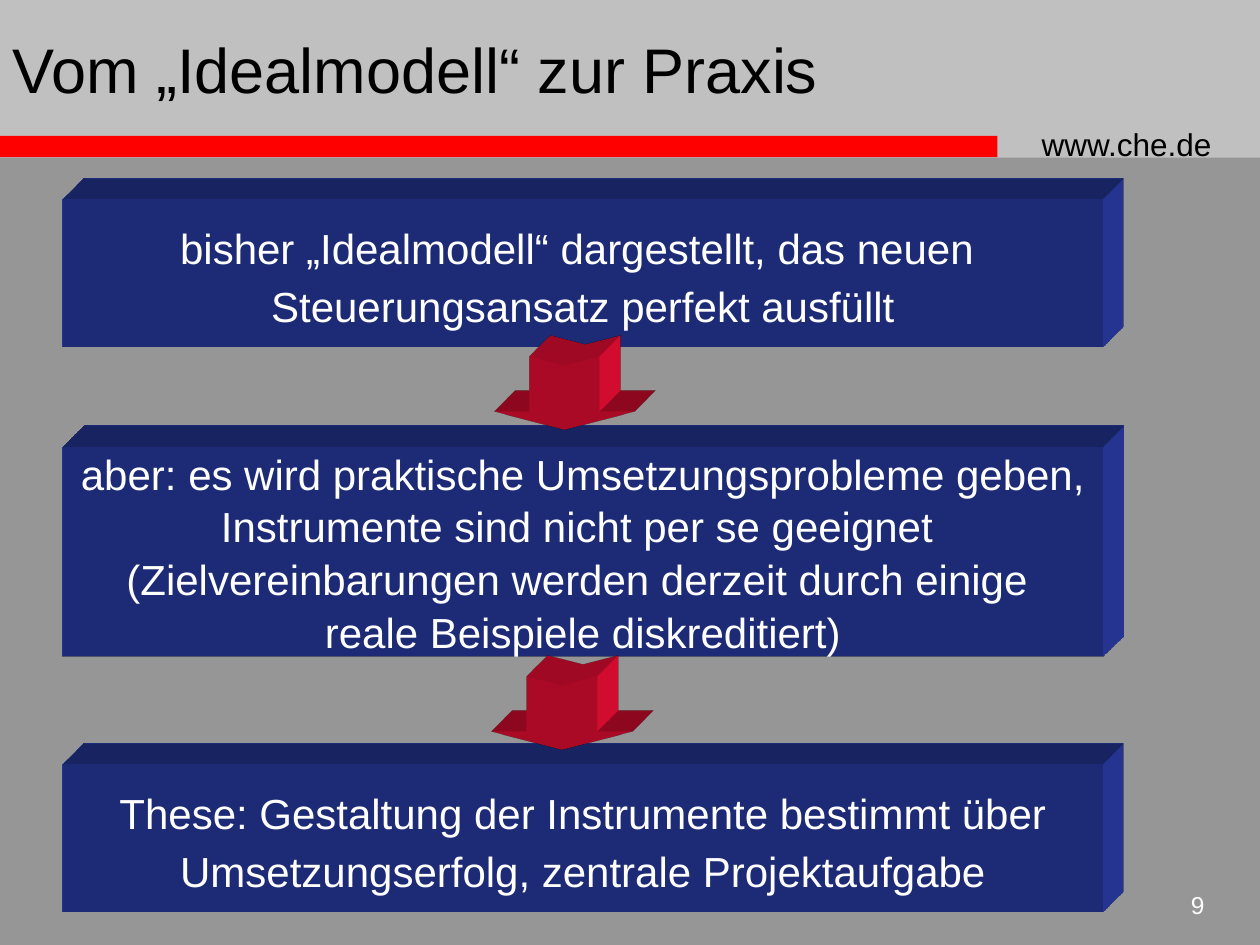
"""Build the slide 'Vom „Idealmodell“ zur Praxis' with three raised boxes and two arrows."""
from lxml.etree import SubElement
from pptx import Presentation
from pptx.dml.color import RGBColor
from pptx.enum.shapes import MSO_SHAPE as Shape
from pptx.enum.text import MSO_ANCHOR as Anchor, PP_ALIGN as Align
from pptx.oxml import parse_xml
from pptx.oxml.ns import nsdecls, qn
from pptx.util import Cm, Pt

FONT = "Arial"
BLACK = RGBColor(0x00, 0x00, 0x00)
WHITE = RGBColor(0xFF, 0xFF, 0xFF)
GRAY = RGBColor(0x96, 0x96, 0x96)
SILVER = RGBColor(0xC0, 0xC0, 0xC0)
RED = RGBColor(0xFF, 0x00, 0x00)
BLUE = RGBColor(0x29, 0x3B, 0xA5)
CRIMSON = RGBColor(0xF0, 0x0E, 0x34)

TITLE = "Vom „Idealmodell“ zur Praxis"
BANDS = [
    (SILVER, (0, 0, 25.4, 3.18)),
    (RED, (-0.03, 2.74, 20.14, 0.43)),
]
LABELS = [
    ("www.che.de", 18, BLACK, Align.LEFT, (20.75, 2.39, 4.45, 1.02)),
    ("9", 14, WHITE, Align.RIGHT, (23.06, 17.81, 1.47, 1.07)),
]
BOXES = [
    (4.02, 2.97, 1.15, [
        "bisher „Idealmodell“ dargestellt, das neuen ",
        "Steuerungsansatz perfekt ausfüllt",
    ]),
    (9.0, 4.23, 1.05, [
        "aber: es wird praktische Umsetzungsprobleme geben,",
        "Instrumente sind nicht per se geeignet ",
        "(Zielvereinbarungen werden derzeit durch einige ",
        "reale Beispiele diskreditiert)",
    ]),
    (15.41, 2.97, 1.15, [
        "These: Gestaltung der Instrumente bestimmt über",
        "Umsetzungserfolg, zentrale Projektaufgabe",
    ]),
]
BOX_LEFT, BOX_WIDTH = 1.27, 20.96
ARROW_LENGTH, ARROW_BREADTH = 1.47, 2.84
ARROW_CENTERS = [(11.38, 7.92), (11.33, 14.38)]


def add_shape(slide, kind, color, box):
    shape = slide.shapes.add_shape(kind, *map(Cm, box))
    shape.shadow.inherit = False
    shape.fill.solid()
    shape.fill.fore_color.rgb = color
    shape.line.fill.background()
    return shape


def extrude(shape, color):
    properties = shape._element.spPr
    properties.append(parse_xml(
        f'<a:scene3d {nsdecls("a")}><a:camera prst="legacyObliqueTopRight"/>'
        '<a:lightRig rig="legacyFlat3" dir="b"/></a:scene3d>'))
    properties.append(parse_xml(
        f'<a:sp3d {nsdecls("a")} extrusionH="430200" prstMaterial="legacyMatte">'
        '<a:bevelT w="13500" h="13500" prst="angle"/>'
        '<a:bevelB w="13500" h="13500" prst="angle"/>'
        f'<a:extrusionClr><a:srgbClr val="{color}"/></a:extrusionClr></a:sp3d>'))


def write(frame, lines, size, color, align, spacing=1.0):
    for index, line in enumerate(lines):
        paragraph = frame.add_paragraph() if index else frame.paragraphs[0]
        paragraph.alignment = align
        paragraph.line_spacing = spacing
        run = paragraph.add_run()
        run.text = line
        run.font.name = FONT
        run.font.size = Pt(size)
        run.font.color.rgb = color


def add_box(slide, top, height, spacing, lines):
    shape = add_shape(slide, Shape.RECTANGLE, BLUE, (BOX_LEFT, top, BOX_WIDTH, height))
    extrude(shape, BLUE)
    frame = shape.text_frame
    frame.word_wrap = False
    frame.vertical_anchor = Anchor.MIDDLE
    write(frame, lines, 24, WHITE, Align.CENTER, spacing)
    SubElement(frame._txBody.bodyPr, qn("a:flatTx"))


def add_arrow(slide, center_x, center_y):
    box = (center_x - ARROW_LENGTH / 2, center_y - ARROW_BREADTH / 2,
           ARROW_LENGTH, ARROW_BREADTH)
    arrow = add_shape(slide, Shape.NOTCHED_RIGHT_ARROW, CRIMSON, box)
    arrow.adjustments[0], arrow.adjustments[1] = 0.5, 0.25
    arrow.rotation = 90
    extrude(arrow, CRIMSON)


def place_title(slide):
    title = slide.shapes.title
    slide.shapes._spTree.append(title._element)
    title.left, title.top, title.width, title.height = map(Cm, (0, 0, 20.52, 2.74))
    title.text_frame.vertical_anchor = Anchor.MIDDLE
    write(title.text_frame, [TITLE], 36, BLACK, Align.LEFT)


def main():
    presentation = Presentation()
    presentation.slide_width, presentation.slide_height = Cm(25.4), Cm(19.05)
    slide = presentation.slides.add_slide(presentation.slide_layouts[5])
    slide.background.fill.solid()
    slide.background.fill.fore_color.rgb = GRAY

    for color, box in BANDS:
        add_shape(slide, Shape.RECTANGLE, color, box)
    for text, size, color, align, box in LABELS:
        frame = slide.shapes.add_textbox(*map(Cm, box)).text_frame
        frame.word_wrap = True
        write(frame, [text], size, color, align)
    place_title(slide)

    for index, box in enumerate(BOXES):
        add_box(slide, *box)
        if index:
            add_arrow(slide, *ARROW_CENTERS[index - 1])
    presentation.save("out.pptx")


if __name__ == "__main__":
    main()
